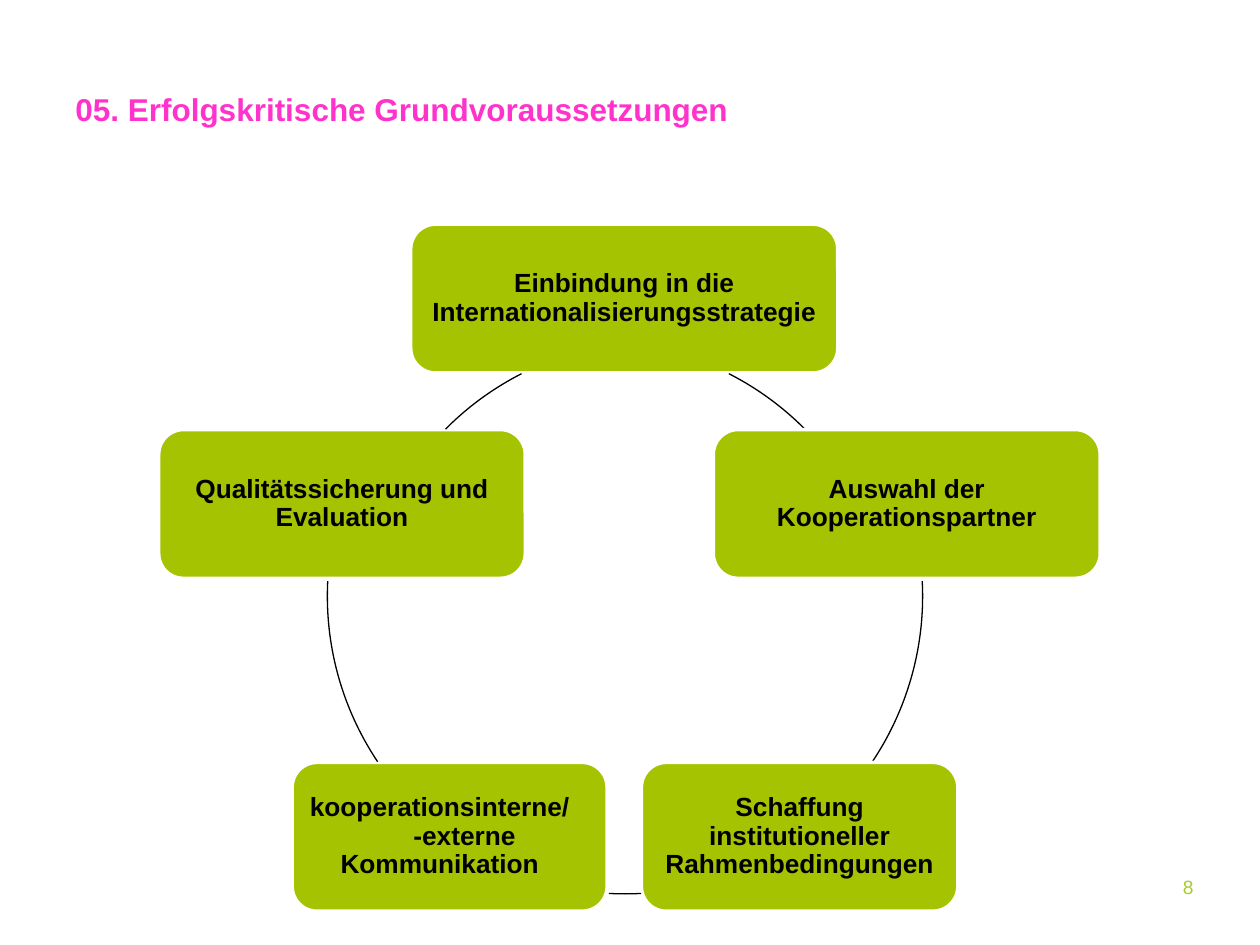
from pptx import Presentation
from pptx.dml.color import RGBColor
from pptx.enum.shapes import MSO_SHAPE as Shape
from pptx.enum.text import MSO_ANCHOR as Anchor, PP_ALIGN as Align
from pptx.util import Cm, Pt

PINK = RGBColor(0xFF, 0x33, 0xCC)
GREEN = RGBColor(0xA5, 0xC3, 0x00)
PAGE_GREEN = RGBColor(0xA8, 0xCC, 0x2F)
BLACK = RGBColor(0, 0, 0)
WHITE = RGBColor(0xFF, 0xFF, 0xFF)

FACTOR_HEIGHT = 3
CIRCLE_SIZE = 12

# Wording, left, top and width within the cycle, in cm
FACTORS = [
    (["Einbindung in die Internationalisierungsstrategie"], 5.08, 0, 8.61),
    (["Auswahl der Kooperationspartner"], 11.18, 4.14, 7.8),
    (["Schaffung institutioneller Rahmenbedingungen"], 9.73, 10.85, 6.38),
    (["kooperationsinterne/", "-externe", "Kommunikation"], 2.69, 10.85, 6.35),
    (["Qualitätssicherung und Evaluation"], 0, 4.14, 7.39),
]
# Left and top of the circle within the cycle, start and end angle (clockwise from east)
ARCS = [
    (2.77, 2.36, 297, 315.2),
    (3.4, 1.5, 357.1, 33.8),
    (3.4, 1.5, 86.9, 93.1),
    (3.4, 1.5, 146.2, 182.9),
    (4.04, 2.36, 224.8, 243),
]
# Right and left indents that stagger the two halves of the word pair, in cm
STAGGER = {"kooperationsinterne/": ("marR", 0.4), "-externe": ("marL", 1)}


def style(paragraph, size, color, bold=False, align=Align.LEFT):
    paragraph.alignment = align
    for run in paragraph.runs:
        run.font.name = "Arial"
        run.font.size = Pt(size)
        run.font.bold = bold
        run.font.color.rgb = color


def add_label(slide, box, wording, size, color, bold=False, align=Align.LEFT):
    frame = slide.shapes.add_textbox(*map(Cm, box)).text_frame
    frame.word_wrap = True
    frame.text = wording
    style(frame.paragraphs[0], size, color, bold, align)


def add_factor(slide, box, lines):
    factor = slide.shapes.add_shape(Shape.ROUNDED_RECTANGLE, *map(Cm, box))
    factor.shadow.inherit = False
    factor.fill.solid()
    factor.fill.fore_color.rgb = GREEN
    factor.line.color.rgb = WHITE
    factor.line.width = Pt(2)
    frame = factor.text_frame
    frame.word_wrap = True
    frame.vertical_anchor = Anchor.MIDDLE
    frame.margin_left = frame.margin_right = Cm(0.15)
    frame.margin_top = frame.margin_bottom = Cm(0.15)
    frame.text = "\n".join(lines)
    for paragraph in frame.paragraphs:
        style(paragraph, 15, BLACK, True, Align.CENTER)
        paragraph.line_spacing = 0.9
        if paragraph.text in STAGGER:
            side, indent = STAGGER[paragraph.text]
            paragraph._p.get_or_add_pPr().set(side, str(Cm(indent)))


def add_arc(slide, box, start, end):
    arc = slide.shapes.add_shape(Shape.ARC, *map(Cm, box))
    arc.shadow.inherit = False
    arc.fill.background()
    arc.line.color.rgb = BLACK
    arc.line.width = Pt(0.75)
    # Angles are stored in 1/60000 degree, adjustments in 1/100000
    arc.adjustments[0] = start * 0.6
    arc.adjustments[1] = end * 0.6


def add_cycle(slide, left, top):
    for (lines, x, y, width), (arc_x, arc_y, start, end) in zip(FACTORS, ARCS):
        add_factor(slide, (left + x, top + y, width, FACTOR_HEIGHT), lines)
        circle = (left + arc_x, top + arc_y, CIRCLE_SIZE, CIRCLE_SIZE)
        add_arc(slide, circle, start, end)


def main():
    deck = Presentation()
    deck.slide_width, deck.slide_height = Cm(25.4), Cm(19.05)
    slide = deck.slides.add_slide(deck.slide_layouts[6])
    add_label(slide, (21.31, 17.53, 3, 0.74), "8", 11, PAGE_GREEN, align=Align.RIGHT)
    add_label(slide, (1.27, 1.7, 13.8, 3.18),
              "05. Erfolgskritische Grundvoraussetzungen", 18, PINK, bold=True)
    add_cycle(slide, 3.2, 4.52)
    deck.save("out.pptx")


if __name__ == "__main__":
    main()
